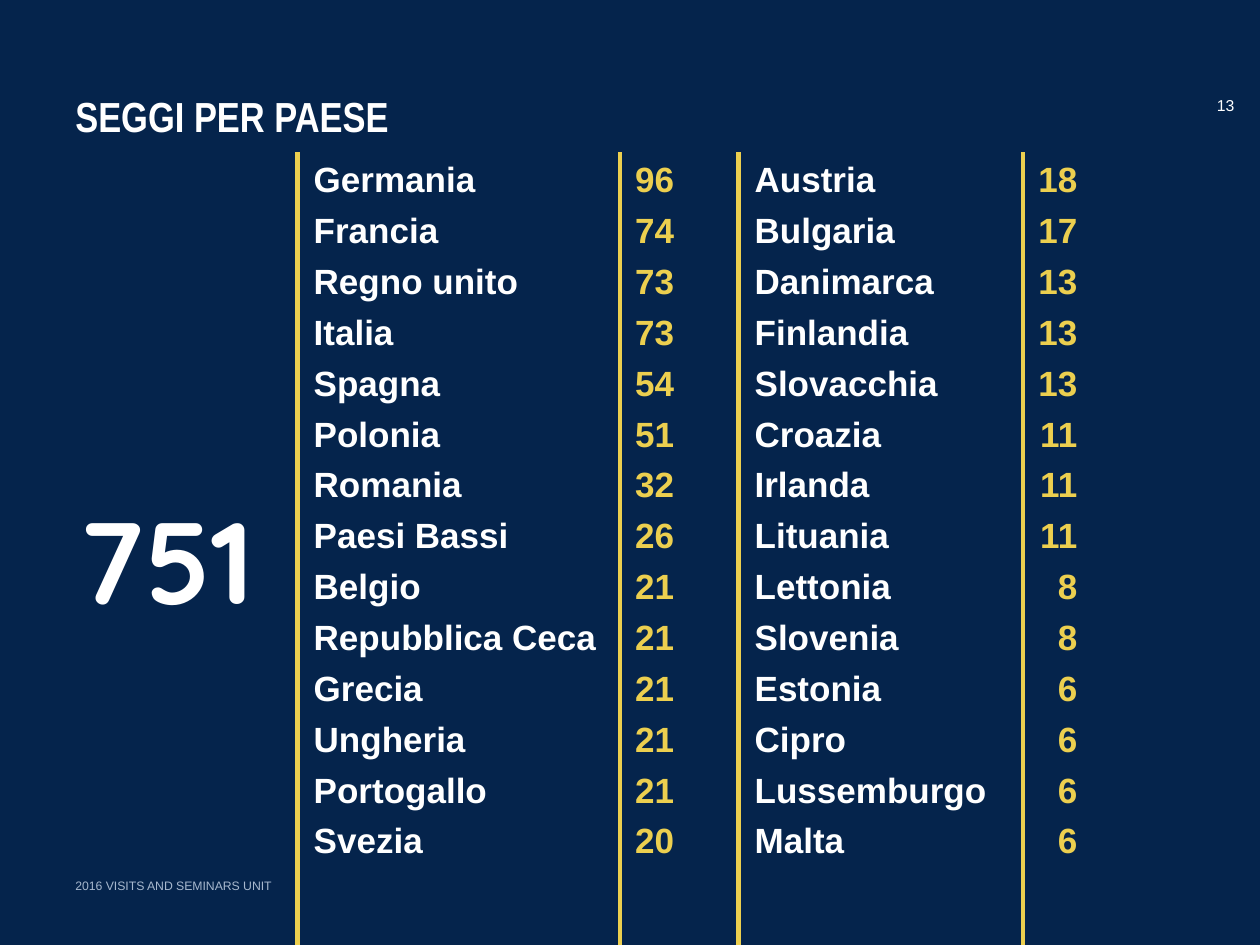
from dataclasses import dataclass

import pptx
import pptx.dml.color
import pptx.enum.text
import pptx.oxml
import pptx.oxml.ns
import pptx.util
from pptx.util import Inches

ALIGN = pptx.enum.text.PP_ALIGN
ANCHOR = pptx.enum.text.MSO_ANCHOR


@dataclass(frozen=True)
class TextStyle:
    size: float
    color: str = "FFFFFF"
    font: str = "Arial"
    bold: bool = False


@dataclass(frozen=True)
class Theme:
    background: str = "05244C"
    rule_color: str = "ECCF4F"
    rule_width: float = 3
    title: TextStyle = TextStyle(24, font="Arial Narrow", bold=True)
    small: TextStyle = TextStyle(7, "A7B8CE")
    page_number: TextStyle = TextStyle(9)
    total: TextStyle = TextStyle(66, font="Quicksand", bold=True)
    country: TextStyle = TextStyle(20, bold=True)
    seats: TextStyle = TextStyle(20, "ECCF4F", bold=True)


@dataclass(frozen=True)
class Label:
    text: str
    left: float
    top: float
    width: float
    height: float
    style: TextStyle
    anchor: ANCHOR = ANCHOR.TOP
    bottom_inset: float = 0.05


@dataclass(frozen=True)
class Country:
    name: str
    seats: int


@dataclass(frozen=True)
class CountryList:
    first_column: int
    seats_right_inset: float
    countries: tuple[Country, ...]


THEME = Theme()

LABELS = (
    Label("2016 VISITS AND SEMINARS UNIT", 0.5, 6.92, 7.74, 0.26, THEME.small),
    Label("13", 9.56, 0.71, 0.44, 0.34, THEME.page_number),
    Label("SEGGI PER PAESE", 0.5, 0.64, 8.13, 0.61, THEME.title, ANCHOR.MIDDLE, 0.11),
)

COUNTRY_LISTS = (
    CountryList(1, 0.51, (
        Country("Germania", 96), Country("Francia", 74),
        Country("Regno unito", 73), Country("Italia", 73),
        Country("Spagna", 54), Country("Polonia", 51),
        Country("Romania", 32), Country("Paesi Bassi", 26),
        Country("Belgio", 21), Country("Repubblica Ceca", 21),
        Country("Grecia", 21), Country("Ungheria", 21),
        Country("Portogallo", 21), Country("Svezia", 20),
    )),
    CountryList(3, 0.57, (
        Country("Austria", 18), Country("Bulgaria", 17),
        Country("Danimarca", 13), Country("Finlandia", 13),
        Country("Slovacchia", 13), Country("Croazia", 11),
        Country("Irlanda", 11), Country("Lituania", 11),
        Country("Lettonia", 8), Country("Slovenia", 8),
        Country("Estonia", 6), Country("Cipro", 6),
        Country("Lussemburgo", 6), Country("Malta", 6),
    )),
)

TOTAL_SEATS = "751"
COLUMN_WIDTHS = (1.86, 2.56, 0.94, 2.26, 1.0)
ROW_HEIGHT = 0.4
TABLE_LEFT, TABLE_TOP = 0.5, 1.21
NO_GRID_STYLE = "{2D5ABB26-0587-4C30-8999-92F81FD0307C}"


def write_text(text_frame, text: str, style: TextStyle, alignment: ALIGN = ALIGN.LEFT) -> None:
    paragraph = text_frame.paragraphs[0]
    paragraph.text = text
    paragraph.alignment = alignment
    font = paragraph.font
    font.name = style.font
    font.size = pptx.util.Pt(style.size)
    font.bold = style.bold
    font.color.rgb = pptx.dml.color.RGBColor.from_string(style.color)


def add_label(slide, label: Label) -> None:
    shape = slide.shapes.add_textbox(
        Inches(label.left), Inches(label.top), Inches(label.width), Inches(label.height))
    text_frame = shape.text_frame
    text_frame.word_wrap = True
    text_frame.vertical_anchor = label.anchor
    text_frame.margin_bottom = Inches(label.bottom_inset)
    write_text(text_frame, label.text, label.style)


def add_rule(cell, side: str) -> None:
    """Draw a solid border on the L or R side of a cell."""
    width = pptx.util.Pt(THEME.rule_width)
    cell._tc.get_or_add_tcPr().append(pptx.oxml.parse_xml(
        f'<a:ln{side} {pptx.oxml.ns.nsdecls("a")} w="{width}"><a:solidFill>'
        f'<a:srgbClr val="{THEME.rule_color}"/></a:solidFill></a:ln{side}>'))


def set_insets(cell, left: float, right: float, bottom: float = 0) -> None:
    cell.margin_left, cell.margin_right = Inches(left), Inches(right)
    cell.margin_top, cell.margin_bottom = Inches(0.07), Inches(bottom)


def add_seats_table(slide) -> None:
    row_count = len(COUNTRY_LISTS[0].countries)
    table = slide.shapes.add_table(
        row_count, len(COLUMN_WIDTHS), Inches(TABLE_LEFT), Inches(TABLE_TOP),
        Inches(sum(COLUMN_WIDTHS)), Inches(ROW_HEIGHT * row_count)).table
    table.first_row = table.horz_banding = False
    table._tbl.tblPr.find(pptx.oxml.ns.qn("a:tableStyleId")).text = NO_GRID_STYLE
    for column, width in zip(table.columns, COLUMN_WIDTHS):
        column.width = Inches(width)
    for row in table.rows:
        row.height = Inches(ROW_HEIGHT)

    # Total, spanning every row
    total_cell = table.cell(0, 0)
    total_cell.merge(table.cell(row_count - 1, 0))
    set_insets(total_cell, 0.13, 0.13, 0.07)
    total_cell.vertical_anchor = ANCHOR.MIDDLE
    write_text(total_cell.text_frame, TOTAL_SEATS, THEME.total)

    # Countries and their seats, with a rule before each list
    for country_list in COUNTRY_LISTS:
        first = country_list.first_column
        for row_index, country in enumerate(country_list.countries):
            name_cell = table.cell(row_index, first)
            seats_cell = table.cell(row_index, first + 1)
            set_insets(name_cell, 0.13, 0.13)
            set_insets(seats_cell, 0, country_list.seats_right_inset)
            write_text(name_cell.text_frame, country.name, THEME.country)
            write_text(seats_cell.text_frame, str(country.seats), THEME.seats, ALIGN.RIGHT)
            add_rule(table.cell(row_index, first - 1), "R")
            add_rule(name_cell, "L")

    for cell in table.iter_cells():
        cell.fill.background()


def main() -> None:
    presentation = pptx.Presentation()
    presentation.slide_width, presentation.slide_height = Inches(10), Inches(7.5)
    slide = presentation.slides.add_slide(presentation.slide_layouts[6])
    fill = slide.background.fill
    fill.solid()
    fill.fore_color.rgb = pptx.dml.color.RGBColor.from_string(THEME.background)

    for label in LABELS:
        add_label(slide, label)
    add_seats_table(slide)
    presentation.save("out.pptx")


if __name__ == "__main__":
    main()
